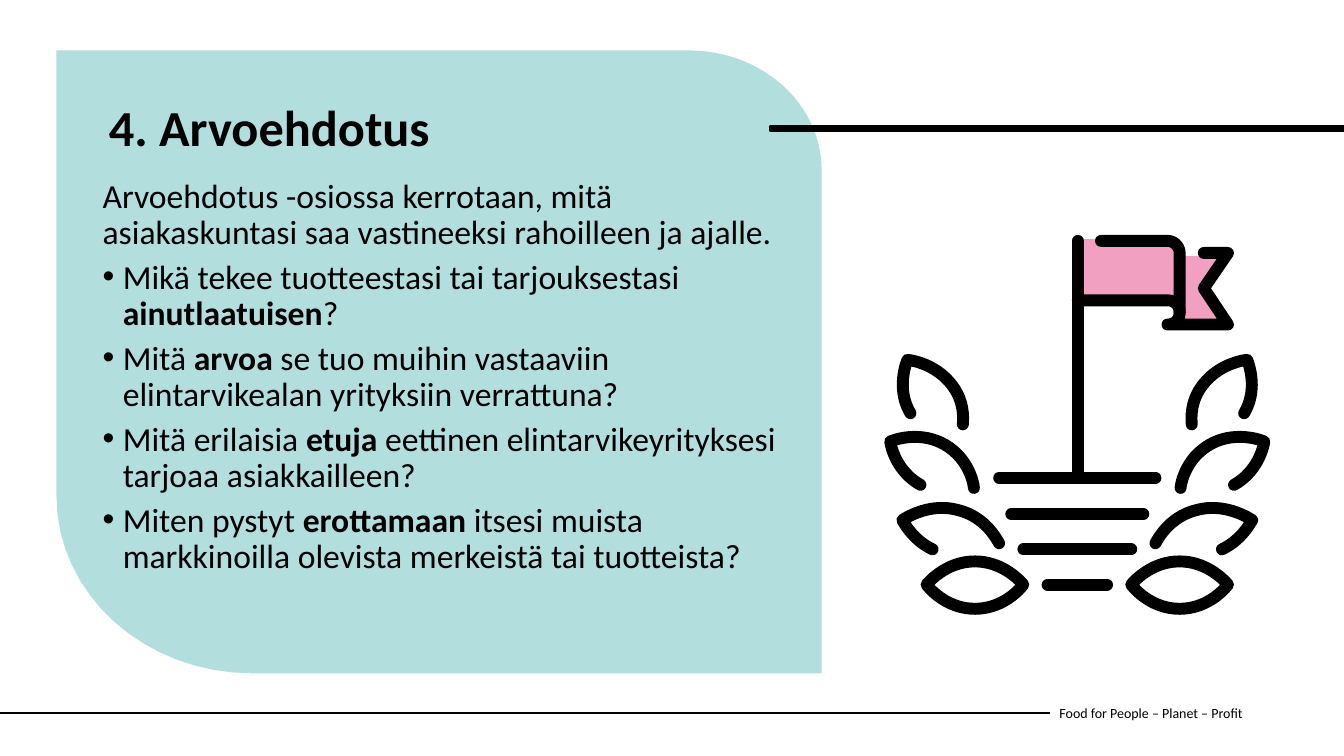
from dataclasses import dataclass

from lxml import etree
from pptx import Presentation
from pptx.dml.color import RGBColor
from pptx.enum.shapes import MSO_CONNECTOR, MSO_SHAPE
from pptx.enum.text import MSO_ANCHOR, MSO_AUTO_SIZE, PP_ALIGN
from pptx.oxml.ns import qn
from pptx.util import Inches, Pt

STRAIGHT = MSO_CONNECTOR.STRAIGHT
RECTANGLE = MSO_SHAPE.RECTANGLE
TOP, MIDDLE = MSO_ANCHOR.TOP, MSO_ANCHOR.MIDDLE
FIXED_SIZE = MSO_AUTO_SIZE.NONE
LEFT = PP_ALIGN.LEFT
TITLE_ONLY = 5
CURVE_STEPS = 16
LAUREL_MIRROR = 21.37


@dataclass(frozen=True)
class Theme:
    font: str = "Calibri"
    black: RGBColor = RGBColor(0x00, 0x00, 0x00)
    teal: RGBColor = RGBColor(0xB2, 0xDE, 0xDD)
    pink: RGBColor = RGBColor(0xF1, 0xA0, 0xC2)
    title_size: int = 36
    body_size: int = 24
    footer_size: int = 10
    icon_stroke: float = 8.5
    bar_stroke: float = 1.93
    footer_stroke: float = 1.5


THEME = Theme()

INTRO = "Arvoehdotus -osiossa kerrotaan, mitä asiakaskuntasi saa vastineeksi rahoilleen ja ajalle."
QUESTIONS = [
    ("Mikä tekee tuotteestasi tai tarjouksestasi ", "ainutlaatuisen", "?"),
    ("Mitä ", "arvoa ", "se tuo muihin vastaaviin elintarvikealan yrityksiin verrattuna?"),
    ("Mitä erilaisia ", "etuja ", "eettinen elintarvikeyrityksesi tarjoaa asiakkailleen?"),
    ("Miten pystyt ", "erottamaan ", "itsesi muista markkinoilla olevista merkeistä tai tuotteista?"),
]

PANEL = [
    (8.15, 6.68), (2.5, 6.68),
    ((1.43, 6.68), (0.56, 5.89), (0.56, 4.92)),
    (0.56, 0.5), (6.83, 0.5),
    ((7.56, 0.5), (8.15, 1.03), (8.15, 1.69)),
]
FLAG_FILLS = [
    [(12.18, 2.54), (11.67, 2.54), (11.67, 3.22), (12.16, 3.22), (11.9, 2.86)],
    [(10.75, 2.37), (11.7, 2.37), (11.7, 3.03), (10.75, 3.03)],
]
FLAG_STROKES = [
    [(10.92, 2.39), (11.58, 2.39), ((11.65, 2.39), (11.7, 2.45), (11.7, 2.51)),
     (11.7, 3.1), ((11.7, 3.17), (11.65, 3.22), (11.58, 3.22)),
     (12.18, 3.22), (11.94, 2.86), (12.18, 2.51), (11.94, 2.51)],
    [(10.69, 2.98), (11.58, 2.98), ((11.65, 2.98), (11.7, 3.03), (11.7, 3.1))],
]
LEAVES = [
    [(12.34, 4.1), ((12.47, 3.88), (12.4, 3.65), (12.37, 3.57)),
     ((12.29, 3.58), (12.05, 3.63), (11.9, 3.86)),
     ((11.83, 3.97), (11.81, 4.09), (11.82, 4.21))],
    [(12.24, 4.81), ((12.47, 4.68), (12.53, 4.45), (12.54, 4.38)),
     ((12.47, 4.35), (12.23, 4.28), (12, 4.41)),
     ((11.74, 4.56), (11.71, 4.83), (11.71, 4.84))],
    [(12.12, 5.45), ((12.29, 5.37), (12.38, 5.23), (12.42, 5.16)),
     ((12.36, 5.12), (12.13, 4.99), (11.87, 5.06)),
     ((11.58, 5.13), (11.47, 5.38), (11.46, 5.39))],
    [(11.22, 5.8), ((11.28, 5.73), (11.45, 5.57), (11.7, 5.57)),
     ((11.95, 5.57), (12.12, 5.73), (12.18, 5.8)),
     ((12.12, 5.88), (11.95, 6.04), (11.7, 6.04)),
     ((11.45, 6.04), (11.28, 5.88), (11.22, 5.8))],
]
POLE_AND_GROUND = [
    ((10.69, 2.39), (10.69, 4.74)),
    ((9.91, 4.74), (11.46, 4.74)),
    ((10.03, 5.1), (11.34, 5.1)),
    ((10.15, 5.45), (11.22, 5.45)),
    ((10.39, 5.8), (10.98, 5.8)),
]


def curve_points(start, controls):
    for step in range(1, CURVE_STEPS + 1):
        t = step / CURVE_STEPS
        weights = ((1 - t) ** 3, 3 * t * (1 - t) ** 2, 3 * t * t * (1 - t), t ** 3)
        points = (start, *controls)
        yield tuple(sum(w * point[axis] for w, point in zip(weights, points)) for axis in (0, 1))


def flatten(outline):
    points = [outline[0]]
    for segment in outline[1:]:
        if len(segment) == 3:
            points.extend(curve_points(points[-1], segment))
        else:
            points.append(segment)
    return points


def add_outline(shapes, points, close):
    start, *rest = [(Inches(x), Inches(y)) for x, y in points]
    builder = shapes.build_freeform(*start)
    builder.add_line_segments(rest, close=close)
    shape = builder.convert_to_shape()
    shape.shadow.inherit = False
    return shape


def add_area(shapes, outline, color):
    area = add_outline(shapes, flatten(outline), True)
    area.fill.solid()
    area.fill.fore_color.rgb = color
    area.line.fill.background()


def set_line(shape, width):
    shape.line.color.rgb = THEME.black
    shape.line.width = Pt(width)


def round_line(shape):
    line = shape.element.spPr.find(qn("a:ln"))
    line.set("cap", "rnd")
    etree.SubElement(line, qn("a:round"))


def add_stroke(shapes, points):
    stroke = add_outline(shapes, points, points[0] == points[-1])
    stroke.fill.background()
    set_line(stroke, THEME.icon_stroke)
    round_line(stroke)


def add_rule(shapes, start, end, width):
    rule = shapes.add_connector(STRAIGHT, *[Inches(value) for value in (*start, *end)])
    set_line(rule, width)
    etree.SubElement(rule.element.spPr, qn("a:effectLst"))
    return rule


def add_bar(shapes, left, top, width, height):
    bar = shapes.add_shape(RECTANGLE, Inches(left), Inches(top), Inches(width), Inches(height))
    bar.shadow.inherit = False
    bar.fill.solid()
    bar.fill.fore_color.rgb = THEME.black
    set_line(bar, THEME.bar_stroke)


def format_para(para, size, bold=False, before=0, spacing=1.0):
    para.alignment = LEFT
    para.line_spacing = spacing
    para.space_before = Pt(before)
    for span in para.runs:
        span.font.name = THEME.font
        span.font.size = Pt(size)
        span.font.bold = bold
        span.font.color.rgb = THEME.black


def add_text(shapes, left, top, width, height, text, anchor):
    box = shapes.add_textbox(Inches(left), Inches(top), Inches(width), Inches(height))
    box.text_frame.word_wrap = True
    box.text_frame.vertical_anchor = anchor
    box.text_frame.text = text
    return box.text_frame


def add_question(frame, parts):
    para = frame.add_paragraph()
    for part in parts:
        para.add_run().text = part
    format_para(para, THEME.body_size, before=6, spacing=0.9)
    para.runs[1].font.bold = True
    properties = para._p.get_or_add_pPr()
    properties.set("marL", str(Inches(0.2)))
    properties.set("indent", str(Inches(-0.2)))
    etree.SubElement(properties, qn("a:buFont")).set("typeface", "Arial")
    etree.SubElement(properties, qn("a:buChar")).set("char", "•")


def set_title(title, text):
    title.left, title.top = Inches(0.98), Inches(0.97)
    title.width, title.height = Inches(5.46), Inches(1.09)
    frame = title.text_frame
    frame.text = text
    frame.vertical_anchor = TOP
    frame.auto_size = FIXED_SIZE
    format_para(frame.paragraphs[0], THEME.title_size, bold=True, before=10, spacing=0.9)


def add_flag_icon(page):
    shapes = page.shapes.add_group_shape().shapes
    for outline in FLAG_FILLS:
        add_area(shapes, outline, THEME.pink)
    for outline in LEAVES:
        points = flatten(outline)
        add_stroke(shapes, points)
        add_stroke(shapes, [(LAUREL_MIRROR - x, y) for x, y in points])
    for outline in FLAG_STROKES:
        add_stroke(shapes, flatten(outline))
    for start, end in POLE_AND_GROUND:
        round_line(add_rule(shapes, start, end, THEME.icon_stroke))


def main():
    deck = Presentation()
    deck.slide_width, deck.slide_height = Inches(13.33), Inches(7.5)
    page = deck.slides.add_slide(deck.slide_layouts[TITLE_ONLY])
    title = page.shapes.title
    footer = add_text(page.shapes, 10.41, 6.87, 2.73, 0.4, "Food for People – Planet – Profit", MIDDLE)
    format_para(footer.paragraphs[0], THEME.footer_size)
    add_rule(page.shapes, (0, 7.07), (10.41, 7.07), THEME.footer_stroke)
    add_area(page.shapes, PANEL, THEME.teal)
    add_bar(page.shapes, 7.64, 1.25, 5.69, 0.05)
    body = add_text(page.shapes, 0.92, 1.73, 7.17, 3.31, INTRO, TOP)
    format_para(body.paragraphs[0], THEME.body_size, before=10, spacing=0.9)
    for parts in QUESTIONS:
        add_question(body, parts)
    set_title(title, "4. Arvoehdotus")
    page.shapes._spTree.append(title.element)
    add_flag_icon(page)
    deck.save("out.pptx")


if __name__ == "__main__":
    main()
